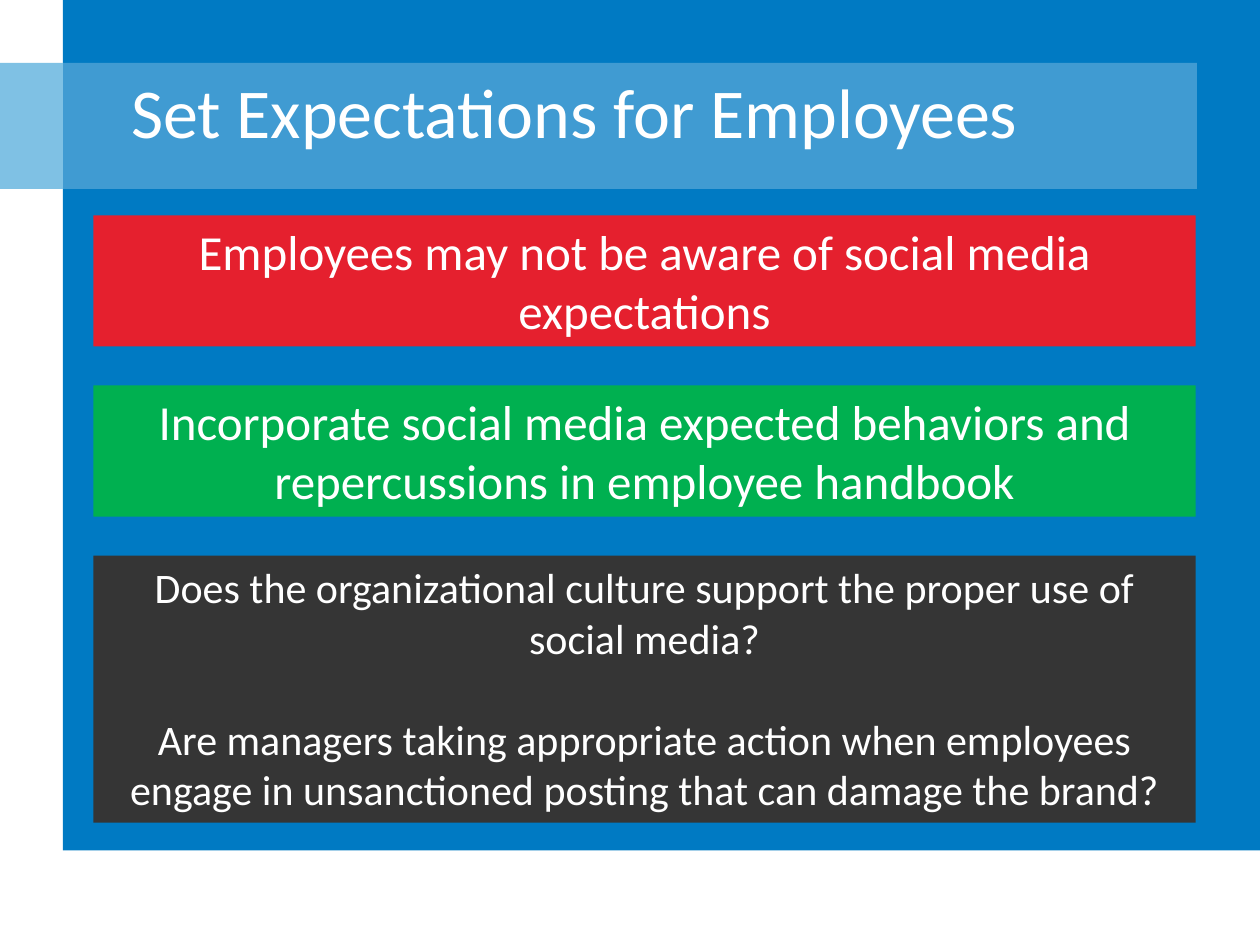
from dataclasses import dataclass

import pptx
import pptx.dml.color
import pptx.enum.shapes
import pptx.enum.text
import pptx.slide
import pptx.util
from pptx.dml.color import RGBColor
from pptx.util import Inches

WHITE = RGBColor(0xFF, 0xFF, 0xFF)
BLUE = RGBColor(0x00, 0x7A, 0xC3)
MID_BLUE = RGBColor(0x40, 0x9B, 0xD2)
PALE_BLUE = RGBColor(0x7F, 0xC1, 0xE4)
RED = RGBColor(0xE5, 0x20, 0x2E)
GREEN = RGBColor(0x00, 0xB0, 0x50)
CHARCOAL = RGBColor(0x35, 0x35, 0x35)
FONT = "Calibri"


@dataclass(frozen=True)
class Panel:
    left: float
    top: float
    width: float
    height: float
    fill: RGBColor
    paragraphs: tuple[str, ...] = ()
    size: int = 28


BACKDROP = (
    Panel(0.5, 0, 9.5, 6.75, BLUE),
    Panel(0.5, 0.5, 9, 1, MID_BLUE),
    Panel(0, 0.5, 0.5, 1, PALE_BLUE),
)
MESSAGES = (
    Panel(0.74, 1.71, 8.75, 1.04, RED,
          ("Employees may not be aware of social media expectations",)),
    Panel(0.74, 3.06, 8.75, 1.04, GREEN,
          ("Incorporate social media expected behaviors and "
           "repercussions in employee handbook",)),
    Panel(0.74, 4.41, 8.75, 2.12, CHARCOAL,
          ("Does the organizational culture support the proper use of social media?",
           "Are managers taking appropriate action when employees engage in "
           "unsanctioned posting that can damage the brand?"), 24),
)


def format_paragraph(paragraph, size: int, alignment) -> None:
    paragraph.alignment = alignment
    for run in paragraph.runs:
        run.font.name = FONT
        run.font.size = pptx.util.Pt(size)
        run.font.color.rgb = WHITE


def draw_panel(slide: pptx.slide.Slide, panel: Panel) -> None:
    shape = slide.shapes.add_shape(
        pptx.enum.shapes.MSO_SHAPE.RECTANGLE, Inches(panel.left), Inches(panel.top),
        Inches(panel.width), Inches(panel.height))
    shape.shadow.inherit = False
    shape.fill.solid()
    shape.fill.fore_color.rgb = panel.fill
    shape.line.fill.background()
    if not panel.paragraphs:
        return

    text_frame = shape.text_frame
    text_frame.word_wrap = True
    text_frame.auto_size = pptx.enum.text.MSO_AUTO_SIZE.SHAPE_TO_FIT_TEXT
    text_frame.vertical_anchor = pptx.enum.text.MSO_ANCHOR.TOP
    text_frame.text = "\n".join(panel.paragraphs)
    for index, paragraph in enumerate(text_frame.paragraphs):
        format_paragraph(paragraph, panel.size, pptx.enum.text.PP_ALIGN.CENTER)
        if index:
            # One line of space between questions
            paragraph.space_before = pptx.util.Pt(round(panel.size * 1.22))


def place_title(slide: pptx.slide.Slide, text: str) -> None:
    title = slide.shapes.title
    title.left, title.top = Inches(0.94), Inches(0.25)
    title.width, title.height = Inches(8.35), Inches(1.25)
    title.text_frame.text = text
    title.text_frame.word_wrap = True
    title.text_frame.auto_size = pptx.enum.text.MSO_AUTO_SIZE.NONE
    title.text_frame.vertical_anchor = pptx.enum.text.MSO_ANCHOR.MIDDLE
    format_paragraph(title.text_frame.paragraphs[0], 40, pptx.enum.text.PP_ALIGN.LEFT)
    # Bring the title in front of the backdrop
    title.element.getparent().append(title.element)


def main() -> None:
    presentation = pptx.Presentation()
    presentation.slide_width = Inches(10)
    presentation.slide_height = Inches(7.5)
    slide = presentation.slides.add_slide(
        presentation.slide_layouts.get_by_name("Title Only"))

    # Blue field and title band
    for panel in BACKDROP:
        draw_panel(slide, panel)
    place_title(slide, "Set Expectations for Employees")

    # Message panels
    for panel in MESSAGES:
        draw_panel(slide, panel)

    presentation.save("out.pptx")


if __name__ == "__main__":
    main()
